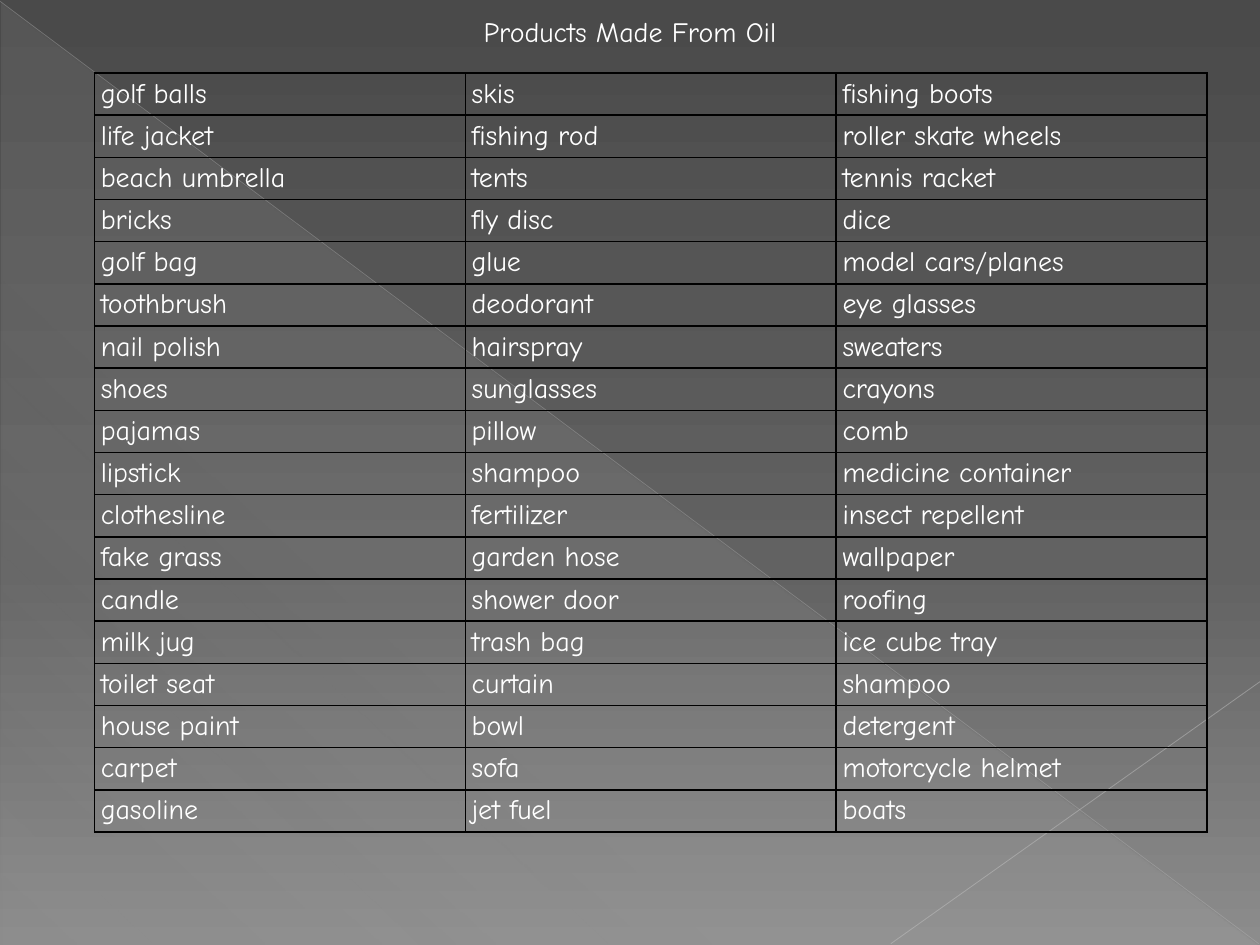
from dataclasses import dataclass

from lxml import etree
from pptx import Presentation
from pptx import util as u
from pptx.dml.color import RGBColor
from pptx.enum import shapes, text
from pptx.oxml.ns import qn

Inches = u.Inches


@dataclass(frozen=True)
class Theme:
    font: str = "Comic Neue"
    size: int = 16
    ink: str = "FFFFFF"
    grid: str = "000000"
    grid_width: float = 1
    backdrop: tuple = ((0, "4A4A4A", 100), (60, "626262", 100), (100, "8C8C8C", 100))
    sheen: tuple = ((0, "D2D2D2", 10), (70, "D2D2D2", 8), (100, "D2D2D2", 1))
    falling_line: tuple = ("BFBFBF", 0.39, 35)
    rising_line: tuple = ("C6C6C6", 0.47, 45)


THEME = Theme()
TITLE = "Products Made From Oil"
PRODUCTS = [
    ("golf balls", "skis", "fishing boots"),
    ("life jacket", "fishing rod", "roller skate wheels"),
    ("beach umbrella", "tents", "tennis racket"),
    ("bricks", "fly disc", "dice"),
    ("golf bag", "glue", "model cars/planes"),
    ("toothbrush", "deodorant", "eye glasses"),
    ("nail polish", "hairspray", "sweaters"),
    ("shoes", "sunglasses", "crayons"),
    ("pajamas", "pillow", "comb"),
    ("lipstick", "shampoo", "medicine container"),
    ("clothesline", "fertilizer", "insect repellent"),
    ("fake grass", "garden hose", "wallpaper"),
    ("candle", "shower door", "roofing"),
    ("milk jug", "trash bag", "ice cube tray"),
    ("toilet seat", "curtain", "shampoo"),
    ("house paint", "bowl", "detergent"),
    ("carpet", "sofa", "motorcycle helmet"),
    ("gasoline", "jet fuel", "boats"),
]


def write(tf, content, *, align=text.PP_ALIGN.LEFT, spacing=1.0):
    p = tf.paragraphs[0]
    p.alignment = align
    p.line_spacing = spacing
    r = p.add_run()
    r.text = content
    r.font.name = THEME.font
    r.font.size = u.Pt(THEME.size)
    r.font.bold = False
    r.font.color.rgb = RGBColor.from_string(THEME.ink)


def add_color(parent, color, opacity=100):
    clr = etree.SubElement(parent, qn("a:srgbClr"), val=color)
    if opacity < 100:
        etree.SubElement(clr, qn("a:alpha"), val=str(opacity * 1000))


def set_gradient(fill, owner, stops, angle):
    fill.gradient()
    grad = owner.find(".//" + qn("a:gradFill"))
    gs_list = grad.find(qn("a:gsLst"))
    gs_list.clear()
    for pos, color, opacity in stops:
        gs = etree.SubElement(gs_list, qn("a:gs"), pos=str(pos * 1000))
        add_color(gs, color, opacity)
    grad.find(qn("a:lin")).set("ang", str(angle * 60000))


def add_line(s, start, end, style):
    color, width, opacity = style
    points = [Inches(v) for v in (*start, *end)]
    line = s.shapes.add_connector(shapes.MSO_CONNECTOR.STRAIGHT, *points)
    line.line.width = u.Pt(width)
    line.line.color.rgb = RGBColor.from_string(color)
    sp_pr = line._element.spPr
    clr = sp_pr.find(".//" + qn("a:srgbClr"))
    etree.SubElement(clr, qn("a:alpha"), val=str(opacity * 1000))
    etree.SubElement(sp_pr, qn("a:effectLst"))


def draw_backdrop(s, x, y, w, h):
    set_gradient(s.background.fill, s._element, THEME.backdrop, 90)
    sp = s.shapes.add_shape(
        shapes.MSO_SHAPE.RIGHT_TRIANGLE,
        Inches(x + 0.01), Inches(y + 0.02), Inches(w - 0.02), Inches(h - 0.02),
    )
    sp.shadow.inherit = False
    set_gradient(sp.fill, sp._element, THEME.sheen, 133)
    sp.line.fill.background()
    bottom = y + h - 0.01
    add_line(s, (x, y + 0.01), (x + w - 0.01, bottom), THEME.falling_line)
    add_line(s, (x + w, y + 5.41), (x + 7.07, bottom), THEME.rising_line)


def draw_title(s, x, y, w, h):
    sp = s.shapes.title
    sp.left, sp.top, sp.width, sp.height = (Inches(v) for v in (x, y, w, h))
    tf = sp.text_frame
    tf.word_wrap = False
    tf.auto_size = text.MSO_AUTO_SIZE.NONE
    tf.vertical_anchor = text.MSO_ANCHOR.MIDDLE
    write(tf, TITLE, align=text.PP_ALIGN.CENTER)


def add_borders(cell):
    tc_pr = cell._tc.get_or_add_tcPr()
    for side in ("lnL", "lnR", "lnT", "lnB"):
        ln = etree.SubElement(tc_pr, qn("a:" + side), w=str(u.Pt(THEME.grid_width)))
        add_color(etree.SubElement(ln, qn("a:solidFill")), THEME.grid)


def draw_products(s, x, y, w, h):
    table = s.shapes.add_table(
        len(PRODUCTS), len(PRODUCTS[0]), Inches(x), Inches(y), Inches(w), Inches(h)
    ).table
    table.first_row = table.horz_banding = False
    for i, row in enumerate(PRODUCTS):
        for j, product in enumerate(row):
            cell = table.cell(i, j)
            cell.margin_left = cell.margin_right = Inches(0.05)
            cell.margin_top = cell.margin_bottom = 0
            add_borders(cell)
            cell.fill.background()
            write(cell.text_frame, product, spacing=1.15)


def main():
    prs = Presentation()
    prs.slide_width, prs.slide_height = Inches(10), Inches(7.5)
    s = prs.slides.add_slide(prs.slide_layouts[5])
    draw_backdrop(s, 0, 0, 10, 7.5)
    draw_products(s, 0.75, 0.58, 8.83, 6.03)
    draw_title(s, 0, 0, 10, 0.5)
    prs.save("out.pptx")


if __name__ == "__main__":
    main()
